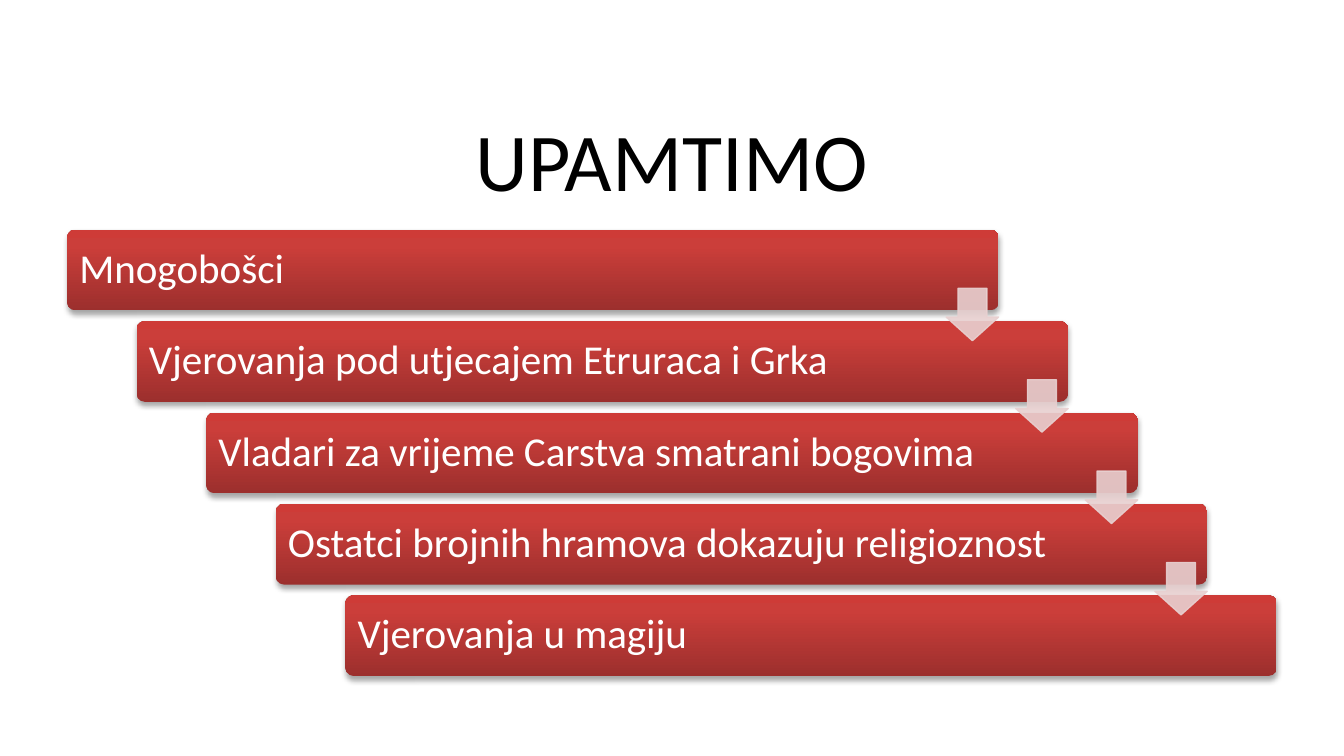
from dataclasses import dataclass

from lxml import etree
from pptx import Presentation
from pptx.dml.color import RGBColor
from pptx.enum.shapes import MSO_SHAPE
from pptx.enum.text import MSO_ANCHOR, PP_ALIGN
from pptx.oxml import parse_xml
from pptx.oxml.ns import nsdecls, qn
from pptx.util import Pt

ROUNDED = MSO_SHAPE.ROUNDED_RECTANGLE
DOWN_ARROW = MSO_SHAPE.DOWN_ARROW
MIDDLE = MSO_ANCHOR.MIDDLE
LEFT, CENTER = PP_ALIGN.LEFT, PP_ALIGN.CENTER
TITLE_ONLY = 5
EMU_PER_PX = 4572  # 200 px to the inch


@dataclass(frozen=True)
class Theme:
    font: str = "Calibri"
    title_size: int = 44
    step_size: int = 22
    title_color: str = "000000"
    step_color: str = "FFFFFF"
    arrow_color: str = "E8D0D0"
    arrow_alpha: int = 90
    bar_stops: tuple = ((0, "9C2F2D"), (80, "CB3E3A"), (100, "CE3B37"))


THEME = Theme()
STEPS = (
    "Mnogobošci",
    "Vjerovanja pod utjecajem Etruraca i Grka",
    "Vladari za vrijeme Carstva smatrani bogovima",
    "Ostatci brojnih hramova dokazuju religioznost",
    "Vjerovanja u magiju",
)


def px(value):
    return round(value * EMU_PER_PX)


def emu_box(*box):
    return [px(length) for length in box]


def write_text(shape, text, size, color, align):
    frame = shape.text_frame
    frame.word_wrap = True
    frame.vertical_anchor = MIDDLE
    frame.text = text
    para = frame.paragraphs[0]
    para.alignment = align
    para.line_spacing = 0.9
    span = para.runs[0]
    span.font.name = THEME.font
    span.font.size = Pt(size)
    span.font.color.rgb = RGBColor.from_string(color)


def add_title(page, box, text):
    title = page.shapes.title
    title.left, title.top, title.width, title.height = emu_box(*box)
    write_text(title, text, THEME.title_size, THEME.title_color, CENTER)


def add_bar(group, box):
    bar = group.shapes.add_shape(ROUNDED, *emu_box(*box))
    bar.adjustments[0] = 0.1
    bar.line.fill.background()

    # Three-stop gradient, running from the bottom edge up
    stops = "".join(
        f'<a:gs pos="{place * 1000}"><a:srgbClr val="{color}"/></a:gs>'
        for place, color in THEME.bar_stops
    )
    gradient = parse_xml(
        f'<a:gradFill {nsdecls("a")} rotWithShape="1"><a:gsLst>{stops}</a:gsLst>'
        '<a:lin ang="16200000" scaled="0"/></a:gradFill>'
    )
    properties = bar._element.spPr
    properties.find(qn("a:prstGeom")).addnext(gradient)

    # Soft shadow below the bar
    bar.shadow.inherit = False
    properties.find(qn("a:effectLst")).append(parse_xml(
        f'<a:outerShdw {nsdecls("a")} blurRad="{Pt(3.1)}" dist="{Pt(1.8)}" '
        'dir="5400000" rotWithShape="0"><a:srgbClr val="000000">'
        '<a:alpha val="35000"/></a:srgbClr></a:outerShdw>'
    ))


def add_label(group, box, text):
    label = group.shapes.add_textbox(*emu_box(*box))
    frame = label.text_frame
    frame.margin_left = frame.margin_right = px(18)
    frame.margin_top = frame.margin_bottom = px(18)
    write_text(label, text, THEME.step_size, THEME.step_color, LEFT)


def add_arrow(group, box):
    arrow = group.shapes.add_shape(DOWN_ARROW, *emu_box(*box))
    arrow.adjustments[0] = 0.55
    arrow.adjustments[1] = 0.45
    arrow.shadow.inherit = False
    arrow.fill.solid()
    arrow.line.width = Pt(0.75)
    for paint in (arrow.fill.fore_color, arrow.line.color):
        paint.rgb = RGBColor.from_string(THEME.arrow_color)
    for color in arrow._element.spPr.iter(qn("a:srgbClr")):
        alpha = etree.SubElement(color, qn("a:alpha"))
        alpha.set("val", str(THEME.arrow_alpha * 1000))


def add_staircase(page, box, steps):
    left, top, width, height = box
    bar_width, bar_height, arrow_size = 1386, 120, 78
    shift = (width - bar_width) / (len(steps) - 1)
    drop = (height - bar_height) / (len(steps) - 1)
    group = page.shapes.add_group_shape()

    # Bars with their labels
    for index, text in enumerate(steps):
        x, y = left + index * shift, top + index * drop
        add_bar(group, (x, y, bar_width, bar_height))
        label_width = 1204 if index else 1250
        add_label(group, (x, y, label_width, bar_height), text)

    # Arrows at the right end of each bar, leading to the next
    for index in range(len(steps) - 1):
        x = left + index * shift + bar_width - arrow_size
        y = top + index * drop + 87
        add_arrow(group, (x, y, arrow_size, arrow_size))


def main():
    deck = Presentation()
    deck.slide_width, deck.slide_height = emu_box(2000, 1125)
    page = deck.slides.add_slide(deck.slide_layouts[TITLE_ONLY])
    add_title(page, (100, 168, 1800, 156), "UPAMTIMO")
    add_staircase(page, (100, 342, 1800, 664), STEPS)
    deck.save("out.pptx")


if __name__ == "__main__":
    main()
